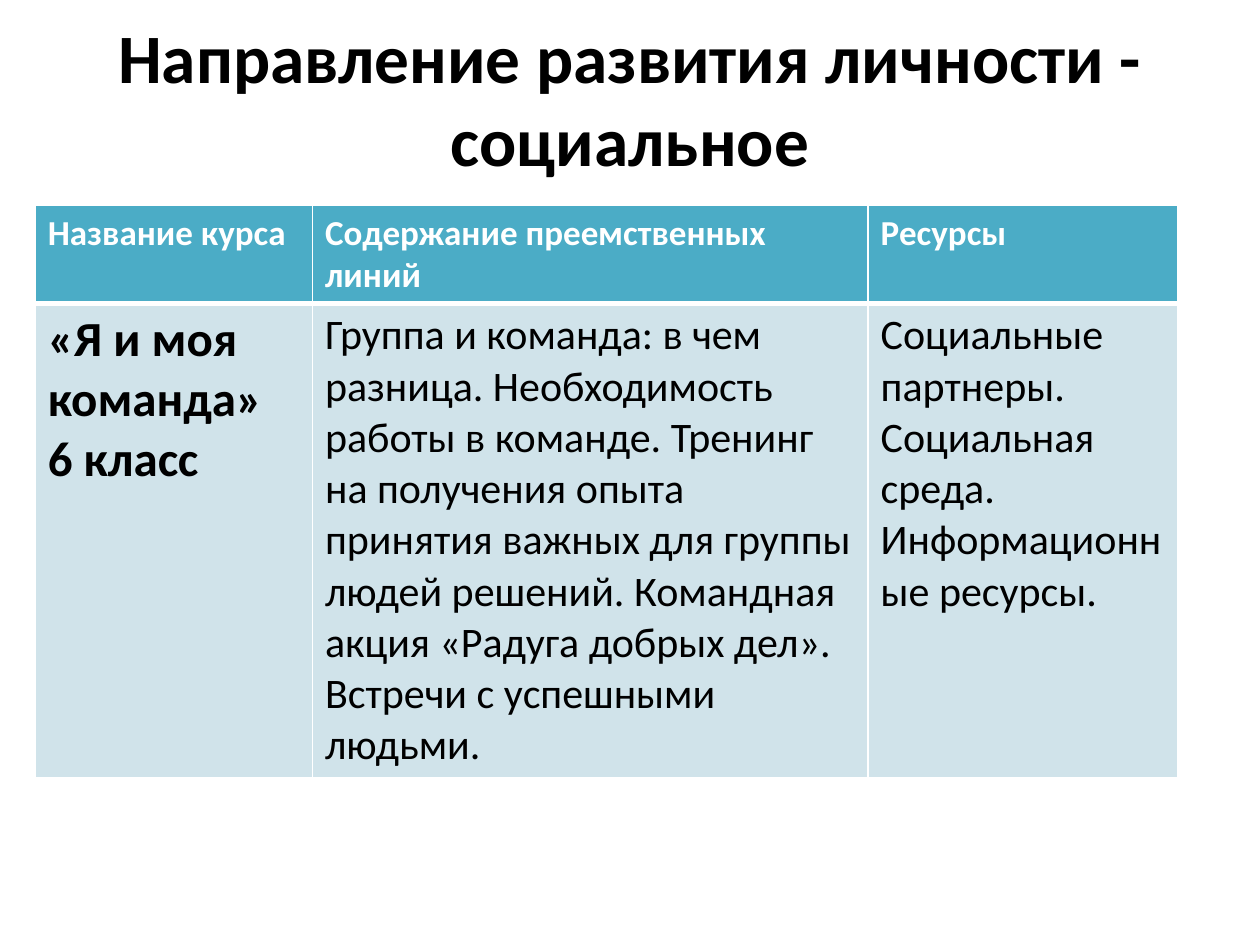
from dataclasses import dataclass

from lxml import etree
from pptx import Presentation
from pptx.dml.color import RGBColor
from pptx.enum.text import MSO_ANCHOR, MSO_AUTO_SIZE, PP_ALIGN
from pptx.oxml.ns import qn
from pptx.util import Inches, Pt

MIDDLE = MSO_ANCHOR.MIDDLE
NO_FIT = MSO_AUTO_SIZE.NONE
CENTER = PP_ALIGN.CENTER

FONT = "Calibri"
BLACK, WHITE = "000000", "FFFFFF"
TEAL, PALE = "4BACC6", "D0E3EA"
WIDTHS = (2.2, 4.41, 2.46)
HEIGHTS = (0.77, 3.7)


@dataclass
class Entry:
    lines: tuple[str, ...]
    size: float
    bold: bool
    ink: str
    fill: str
    base: float = 1


def head(text: str) -> Entry:
    return Entry((text,), 20, True, WHITE, TEAL, base=3)


def body(*lines: str, size: float = 24, bold: bool = False) -> Entry:
    return Entry(lines, size, bold, BLACK, PALE)


ROWS = (
    (
        head("Название курса"),
        head("Содержание преемственных линий"),
        head("Ресурсы"),
    ),
    (
        body("«Я и моя команда»", "6 класс", size=28, bold=True),
        body(
            "Группа и команда: в чем разница. Необходимость работы в команде. "
            "Тренинг на получения опыта принятия важных для группы людей решений. "
            "Командная акция «Радуга добрых дел».",
            "Встречи с успешными людьми.",
        ),
        body("Социальные партнеры. Социальная среда. Информационные ресурсы."),
    ),
)


def color(code: str) -> RGBColor:
    return RGBColor.from_string(code)


def style(font, size: float, bold: bool, ink: str) -> None:
    font.name = FONT
    font.size = Pt(size)
    font.bold = bold
    font.color.rgb = color(ink)


def border(cell, side: str, width: float) -> None:
    props = cell._tc.get_or_add_tcPr()
    line = etree.SubElement(props, qn(f"a:ln{side}"), w=str(Pt(width)))
    solid = etree.SubElement(line, qn("a:solidFill"))
    etree.SubElement(solid, qn("a:srgbClr"), val=WHITE)


def draw_cell(cell, entry: Entry, top: float) -> None:
    for side, width in (("L", 1), ("R", 1), ("T", top), ("B", entry.base)):
        border(cell, side, width)
    cell.fill.solid()
    cell.fill.fore_color.rgb = color(entry.fill)
    cell.text_frame.text = "\n".join(entry.lines)
    for para in cell.text_frame.paragraphs:
        style(para.font, entry.size, entry.bold, entry.ink)


def draw_title(slide, text: str) -> None:
    title = slide.shapes.title
    title.left, title.top = Inches(0.5), Inches(0.3)
    title.width, title.height = Inches(9), Inches(0.95)
    frame = title.text_frame
    frame.text = text
    frame.word_wrap = True
    frame.auto_size = NO_FIT
    frame.vertical_anchor = MIDDLE
    para = frame.paragraphs[0]
    para.alignment = CENTER
    style(para.font, 39.6, True, BLACK)


def draw_table(slide) -> None:
    table = slide.shapes.add_table(
        len(ROWS), len(WIDTHS), Inches(0.28), Inches(1.63),
        Inches(sum(WIDTHS)), Inches(sum(HEIGHTS)),
    ).table
    for col, width in zip(table.columns, WIDTHS):
        col.width = Inches(width)
    for row, height in zip(table.rows, HEIGHTS):
        row.height = Inches(height)
    for r, entries in enumerate(ROWS):
        for c, entry in enumerate(entries):
            top = ROWS[r - 1][c].base if r else 1
            draw_cell(table.cell(r, c), entry, top)


def main() -> None:
    deck = Presentation()
    deck.slide_width, deck.slide_height = Inches(10), Inches(7.5)
    slide = deck.slides.add_slide(deck.slide_layouts[5])
    draw_title(slide, "Направление развития личности - социальное")
    draw_table(slide)
    deck.save("out.pptx")


if __name__ == "__main__":
    main()
